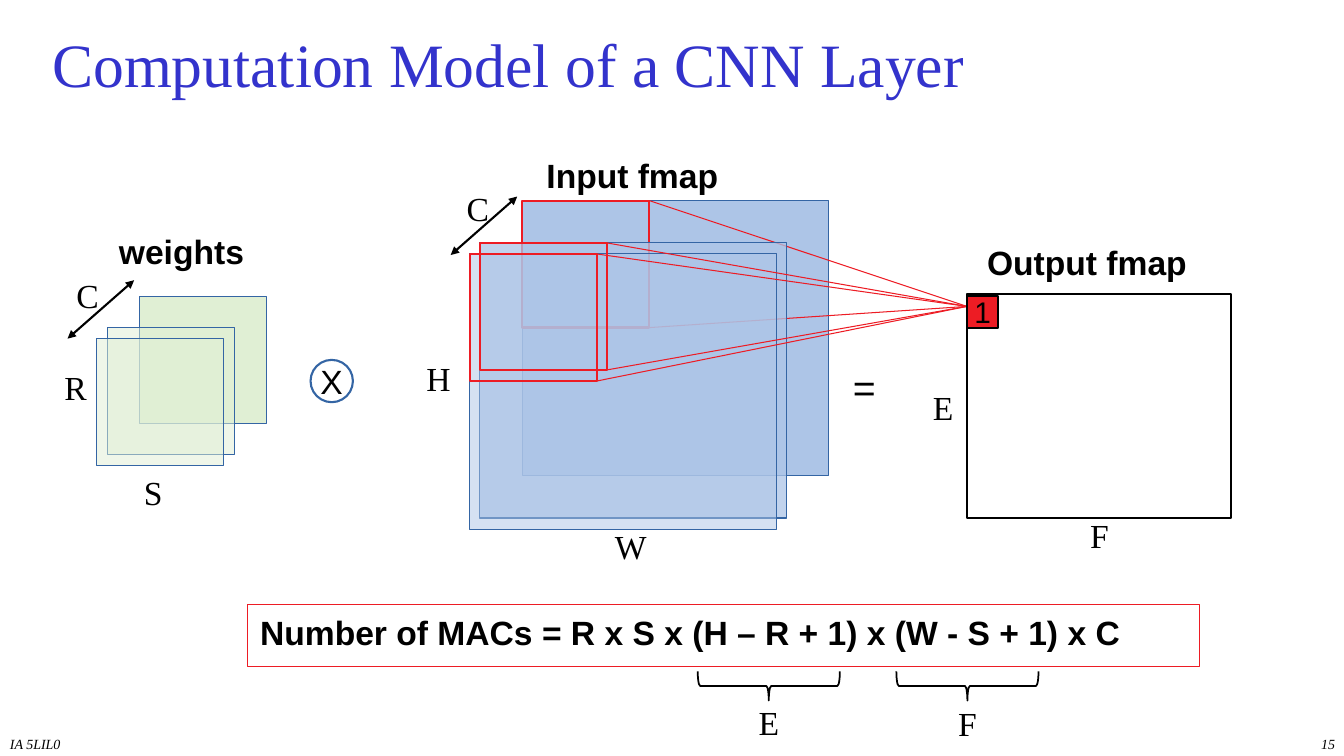
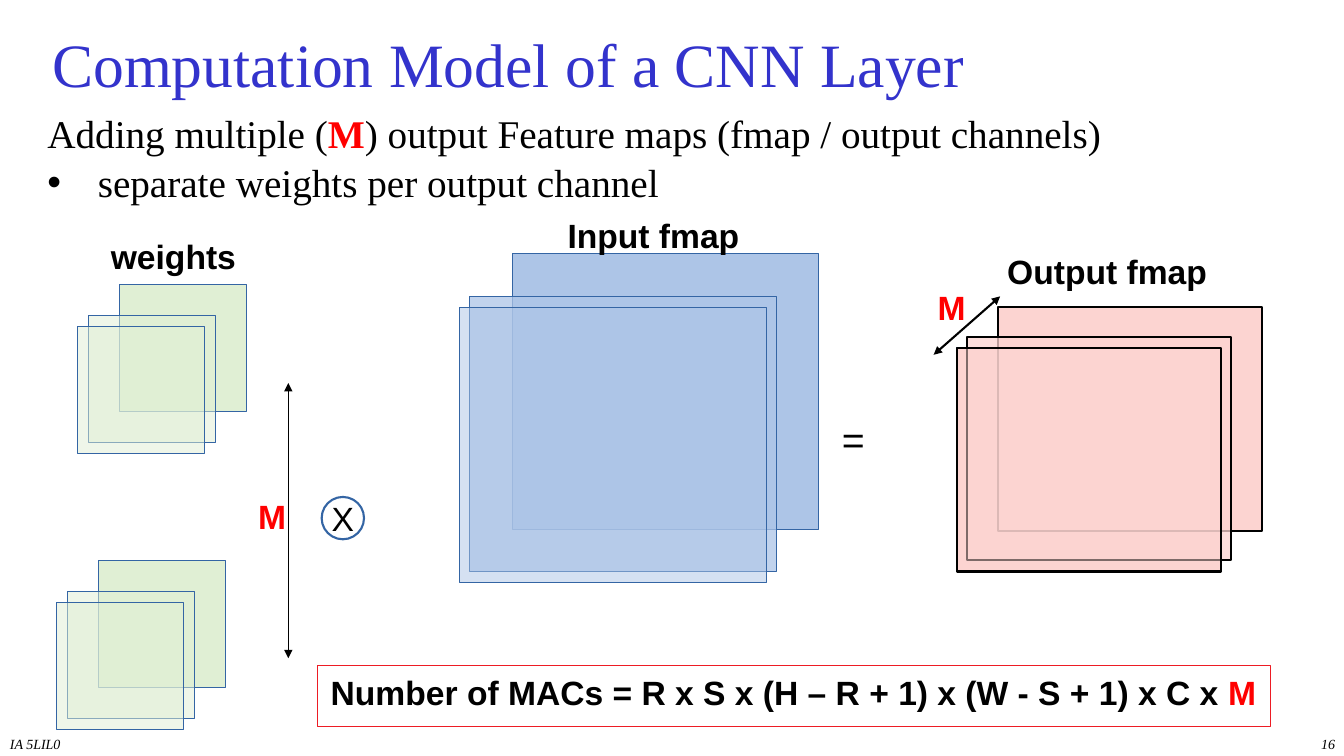
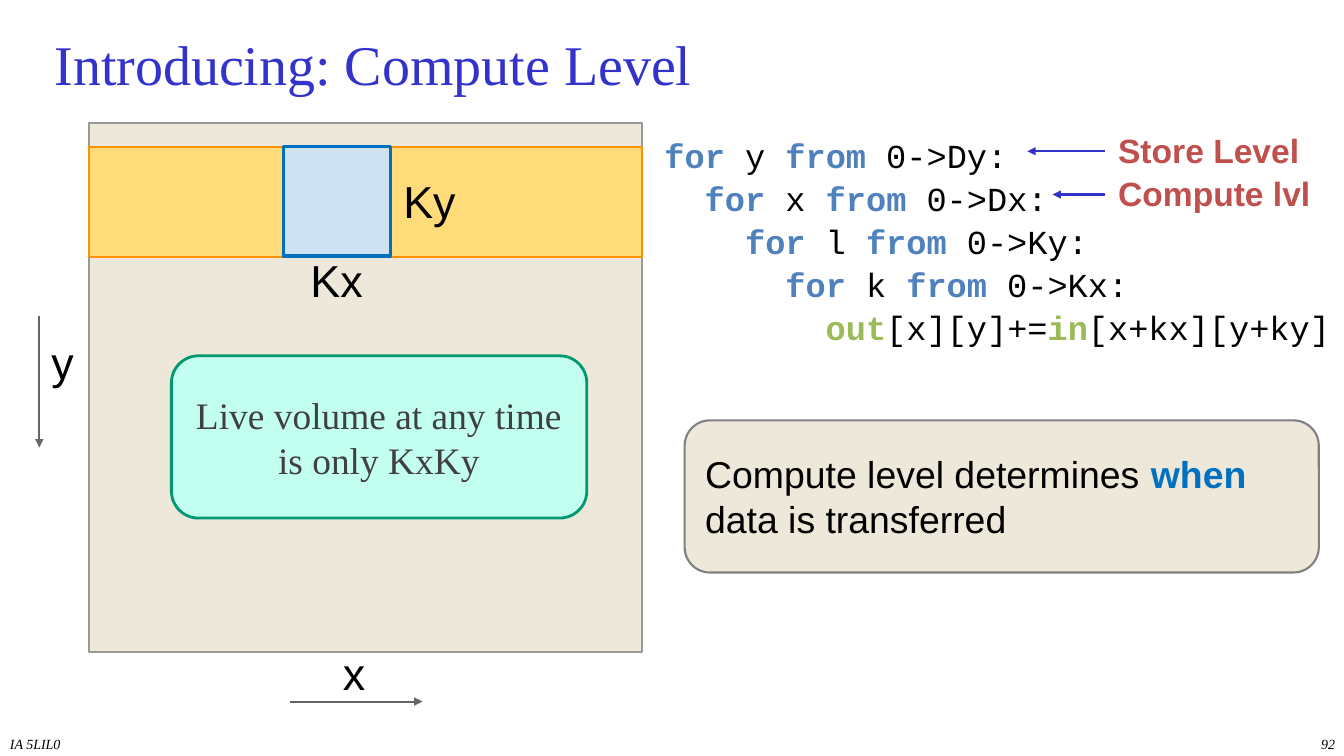
from lxml import etree
from pptx import Presentation
from pptx import util as u
from pptx.dml.color import RGBColor
from pptx.enum import shapes, text
from pptx.oxml.ns import qn

COLOURS = {
    "black": "000000", "white": "FFFFFF", "title": "3333CC", "red": "ED1C24", "accent": "FF0000",
    "outline": "3465A4", "input": "ADC5E7", "weights": "E0EFD4", "output": "FCD4D1",
    "keyword": "4F81BD", "array": "9BBB59", "level": "C0504D", "beige": "EEE8DA",
    "beige line": "999999", "note line": "808080", "axis": "666666", "band": "FFDC79",
    "band line": "FF9100", "kernel": "CFE2F3", "blue": "0070C0", "mint": "C2FFF0",
    "green": "009771", "dark": "404040",
}
SERIF, SANS, MONO = "Times New Roman", "Arial", "Courier New"
LEFT, CENTER, RIGHT = text.PP_ALIGN.LEFT, text.PP_ALIGN.CENTER, text.PP_ALIGN.RIGHT
TOP, MIDDLE = text.MSO_ANCHOR.TOP, text.MSO_ANCHOR.MIDDLE
RECT, OVAL = shapes.MSO_SHAPE.RECTANGLE, shapes.MSO_SHAPE.OVAL
ROUNDED, BRACE = shapes.MSO_SHAPE.ROUNDED_RECTANGLE, shapes.MSO_SHAPE.LEFT_BRACE
BOTH, END = ("headEnd", "tailEnd"), ("tailEnd",)
PLAIN, DIAGRAM, LOOSE, SYMBOL = (0.1, 0.05), (0.13, 0.07), (0.13, 0.13), (0.14, 0.08)

# Sheets of a stack: fill, line, line width, size, offsets and opacities from back to front
STACKS = {
    "input": ("input", "outline", 0.75, (3.04, 2.73),
              [(0, 0, 100), (-0.42, 0.42, 75), (-0.52, 0.53, 50)]),
    "weights": ("weights", "outline", 0.75, (1.26, 1.26),
                [(0, 0, 100), (-0.31, 0.31, 50), (-0.42, 0.42, 50)]),
    "output": ("output", "black", 1.5, (2.62, 2.22),
               [(0, 0, 100), (-0.31, 0.29, 75), (-0.41, 0.4, 50)]),
}
WINDOW = 1.26
FORMULA = "Number of MACs = R x S x (H – R + 1) x (W - S + 1) x C"
DIMENSIONS = [
    ("R", 0.54, 3.59, LEFT), ("S", 1.33, 4.63, LEFT), ("C", 0.66, 2.68, LEFT),
    ("H", 4.13, 3.5, LEFT), ("W", 6, 5.17, LEFT), ("C", 4.53, 1.82, LEFT),
    ("E", 9.12, 3.79, CENTER), ("F", 10.67, 5.06, CENTER),
    ("E", 7.39, 6.91, CENTER), ("F", 9.36, 6.92, CENTER),
]
LOOPS = [("y", "Dy"), ("x", "Dx"), ("l", "Ky"), ("k", "Kx")]
LEVELS = [("Store Level", 1.16, 10.19), ("Compute lvl", 1.59, 10.44)]
AXIS_LABELS = [("x", 3.27, 6.28), ("y", 0.38, 3.19), ("Ky", 3.87, 1.59), ("Kx", 2.95, 2.38)]
AXES = [((2.88, 6.96), (4.19, 6.96)), ((0.39, 3.14), (0.39, 4.44))]


def rgb(name):
    return RGBColor.from_string(COLOURS[name])


def write(shape, paragraphs, size, font=SERIF, colour="black", bold=False, italic=False,
          align=LEFT, anchor=TOP, insets=PLAIN, wrap=True):
    """Fill a shape with paragraphs; a run is a string or (string, bold colour)."""
    frame = shape.text_frame
    frame.word_wrap, frame.vertical_anchor = wrap, anchor
    frame.margin_left = frame.margin_right = u.Inches(insets[0])
    frame.margin_top = frame.margin_bottom = u.Inches(insets[1])
    if isinstance(paragraphs, str):
        paragraphs = [[paragraphs]]
    for index, runs in enumerate(paragraphs):
        paragraph = frame.add_paragraph() if index else frame.paragraphs[0]
        paragraph.alignment = align
        for item in runs:
            content, highlight = (item, None) if isinstance(item, str) else item
            run = paragraph.add_run()
            run.text = content
            run.font.name, run.font.size = font, u.Pt(size)
            run.font.bold, run.font.italic = bold or highlight is not None, italic
            run.font.color.rgb = rgb(highlight or colour)
    return frame


def add_text(slide, box, content, size, **style):
    return write(slide.shapes.add_textbox(*map(u.Inches, box)), content, size, **style)


def add_box(slide, box, fill, line, width, kind=RECT, opacity=100):
    shape = slide.shapes.add_shape(kind, *map(u.Inches, box))
    shape.shadow.inherit = False
    shape.line.color.rgb, shape.line.width = rgb(line), u.Pt(width)
    if fill is None:
        shape.fill.background()
    else:
        shape.fill.solid()
        shape.fill.fore_color.rgb = rgb(fill)
    if opacity < 100:
        colour = shape._element.spPr.find(qn("a:solidFill"))[0]
        etree.SubElement(colour, qn("a:alpha")).set("val", str(opacity * 1000))
    return shape


def add_line(slide, start, end, colour, width, heads=()):
    connector = slide.shapes.add_connector(
        shapes.MSO_CONNECTOR.STRAIGHT, *map(u.Inches, (*start, *end)))
    connector.line.color.rgb, connector.line.width = rgb(colour), u.Pt(width)
    properties = connector._element.spPr
    for head in heads:
        etree.SubElement(properties.find(qn("a:ln")), qn("a:" + head)).set("type", "triangle")
    etree.SubElement(properties, qn("a:effectLst"))


def add_sheets(slide, name, left, top, first=0, last=3):
    fill, line, width, size, offsets = STACKS[name]
    for dx, dy, opacity in offsets[first:last]:
        add_box(slide, (left + dx, top + dy, *size), fill, line, width, opacity=opacity)


def add_windows(slide, left, top, target, first, last):
    """Outline the kernel window on input sheets, with rays to the output pixel."""
    for dx, dy, _ in STACKS["input"][4][first:last]:
        x, y = left + dx, top + dy
        add_box(slide, (x, y, WINDOW, WINDOW), None, "red", 1.5)
        for corner in (y, y + WINDOW):
            add_line(slide, (x + WINDOW, corner), target, "red", 0.75)


def add_caption(slide, content, left, top, width, colour="black", align=LEFT):
    add_text(slide, (left, top, width, 0.5), content, 24, font=SANS, bold=True,
             colour=colour, align=align, insets=DIAGRAM)


def add_operators(slide, times, equals):
    circle = add_box(slide, (*times, 0.42, 0.42), "white", "outline", 1.5, OVAL)
    write(circle, "X", 24, font=SANS, align=CENTER, anchor=MIDDLE, insets=SYMBOL, wrap=False)
    add_text(slide, (*equals, 0.42, 0.56), "=", 28, font=SANS, insets=DIAGRAM)


def add_formula(slide, left, top, runs):
    box = add_box(slide, (left, top, 9.45, 0.61), None, "red", 0.75)
    write(box, [runs], 24, font=SANS, bold=True, insets=DIAGRAM)


def add_slide(presentation, title, number, size=44, insets=PLAIN):
    slide = presentation.slides.add_slide(presentation.slide_layouts[6])
    add_text(slide, (0.42, 0.25, 12.53, 0.75), title, size, colour="title",
             anchor=MIDDLE, insets=insets)
    for left, content, align in ((0, "IA 5LIL0", LEFT), (10.56, str(number), RIGHT)):
        add_text(slide, (left, 7.25, 2.78, 0.25), content, 10, italic=True, align=align)
    return slide


def build_single_output(presentation):
    slide = add_slide(presentation, "Computation Model of a CNN Layer", 15)
    origin, target = (5.18, 1.99), (9.59, 3.04)
    add_sheets(slide, "input", *origin, last=1)
    add_windows(slide, *origin, target, 0, 1)
    add_sheets(slide, "input", *origin, first=1)
    add_windows(slide, *origin, target, 1, 3)
    add_sheets(slide, "weights", 1.38, 2.94)
    add_caption(slide, "Input fmap", 5.29, 1.47, 1.97)
    add_caption(slide, "weights", 0.96, 2.22, 1.68, align=CENTER)
    add_caption(slide, "Output fmap", 9.66, 2.33, 2.25)
    add_operators(slide, (3.08, 3.57), (8.33, 3.53))
    add_box(slide, (9.59, 2.92, 2.62, 2.22), "white", "black", 1.5)
    pixel = add_box(slide, (9.59, 2.94, 0.31, 0.31), "red", "black", 1.5)
    write(pixel, "1", 21.3, font=SANS, align=CENTER, anchor=MIDDLE, insets=SYMBOL, wrap=False)
    add_formula(slide, 2.45, 6, [FORMULA])
    for name, left, top, align in DIMENSIONS:
        add_text(slide, (left, top, 0.47, 0.5), name, 24, align=align)
    for x, y in ((0.67, 3.36), (4.47, 2.53)):
        add_line(slide, (x, y), (x + 0.66, y - 0.58), "black", 1.5, BOTH)
    for left in (7.48, 9.45):
        add_box(slide, (left, 6.1, 0.29, 1.41), None, "black", 1.25, BRACE).rotation = 270


def build_multiple_outputs(presentation):
    slide = add_slide(presentation, "Computation Model of a CNN Layer", 16)
    add_box(slide, (9.49, 3.45, 2.62, 2.22), "output", "outline", 0.75)
    for name, left, top in (("input", 5.08, 2.52), ("output", 9.9, 3.05),
                            ("weights", 1.19, 2.82), ("weights", 0.98, 5.56)):
        add_sheets(slide, name, left, top)
    add_caption(slide, "Input fmap", 5.5, 2.06, 1.97)
    add_caption(slide, "weights", 0.88, 2.27, 1.68, align=CENTER)
    add_caption(slide, "Output fmap", 9.86, 2.42, 2.25)
    for left, top in ((2.43, 4.85), (9.17, 2.78)):
        add_caption(slide, "M", left, top, 0.54, colour="accent")
    add_operators(slide, (3.19, 4.93), (8.22, 4.05))
    add_line(slide, (2.86, 3.8), (2.86, 6.53), "black", 0.75, BOTH)
    add_line(slide, (9.26, 3.52), (9.92, 2.94), "black", 1.5, BOTH)
    add_formula(slide, 3.15, 6.6, [FORMULA + " x ", ("M", "accent")])
    frame = add_text(slide, (0.34, 1, 11.91, 0.88), [
        ["Adding multiple (", ("M", "accent"), ") output Feature maps (fmap / output channels)"],
        ["separate weights per output channel"]], 28, insets=DIAGRAM)
    bullet = frame.paragraphs[1]._p.get_or_add_pPr()
    bullet.set("marL", str(u.Inches(0.5)))
    bullet.set("indent", str(u.Inches(-0.5)))
    etree.SubElement(bullet, qn("a:buFont")).set("typeface", SANS)
    etree.SubElement(bullet, qn("a:buChar")).set("char", "•")
    for paragraph in frame.paragraphs:
        paragraph.line_spacing = 1.04


def build_compute_level(presentation):
    slide = add_slide(presentation, "Introducing: Compute Level", 92, 40, (0.12, 0.12))
    add_box(slide, (0.88, 1.22, 5.49, 5.25), "beige", "beige line", 1.5)
    add_box(slide, (0.88, 1.46, 5.49, 1.09), "band", "band line", 1.5)
    add_box(slide, (2.81, 1.45, 1.06, 1.09), "kernel", "blue", 2.25)
    for name, left, top in AXIS_LABELS:
        add_text(slide, (left, top, 1.63, 0.6), name, 32, font=SANS, insets=LOOSE)
    for start, end in AXES:
        add_line(slide, start, end, "axis", 1.5, END)

    code = [[("for", "keyword"), f" {index} ", ("from ", "keyword"), f"0->{limit}:"]
            for index, limit in LOOPS]
    code.append([("out", "array"), "[x][y]+=", ("in", "array"), "[x+kx][y+ky]"])
    frame = add_text(slide, (6.46, 1.18, 6.95, 2.74), code, 24, font=MONO, insets=LOOSE)
    for depth, paragraph in enumerate(frame.paragraphs):
        paragraph.line_spacing = 1.07
        paragraph._p.get_or_add_pPr().set("marL", str(u.Inches(0.4 * depth)))
    for label, top, tip in LEVELS:
        add_text(slide, (10.96, top, 2.3, 0.74), label, 24, font=SANS, bold=True,
                 colour="level", insets=LOOSE)
        add_line(slide, (10.96, top + 0.34), (tip, top + 0.34), "title", 1.5, END)

    volume = add_box(slide, (1.7, 3.53, 4.12, 1.61), "mint", "green", 2, ROUNDED)
    write(volume, "Live volume at any time is only KxKy", 26.7, colour="dark",
          align=CENTER, anchor=MIDDLE)
    note = add_box(slide, (6.79, 4.17, 6.29, 1.51), "beige", "note line", 1.5, ROUNDED)
    write(note, [["Compute level determines ", ("when", "blue"), " data is transferred"]],
          26.7, font=SANS, anchor=MIDDLE, insets=LOOSE)


def main():
    presentation = Presentation()
    presentation.slide_width, presentation.slide_height = u.Inches(13.33), u.Inches(7.5)
    build_single_output(presentation)
    build_multiple_outputs(presentation)
    build_compute_level(presentation)
    presentation.save("out.pptx")


if __name__ == "__main__":
    main()
